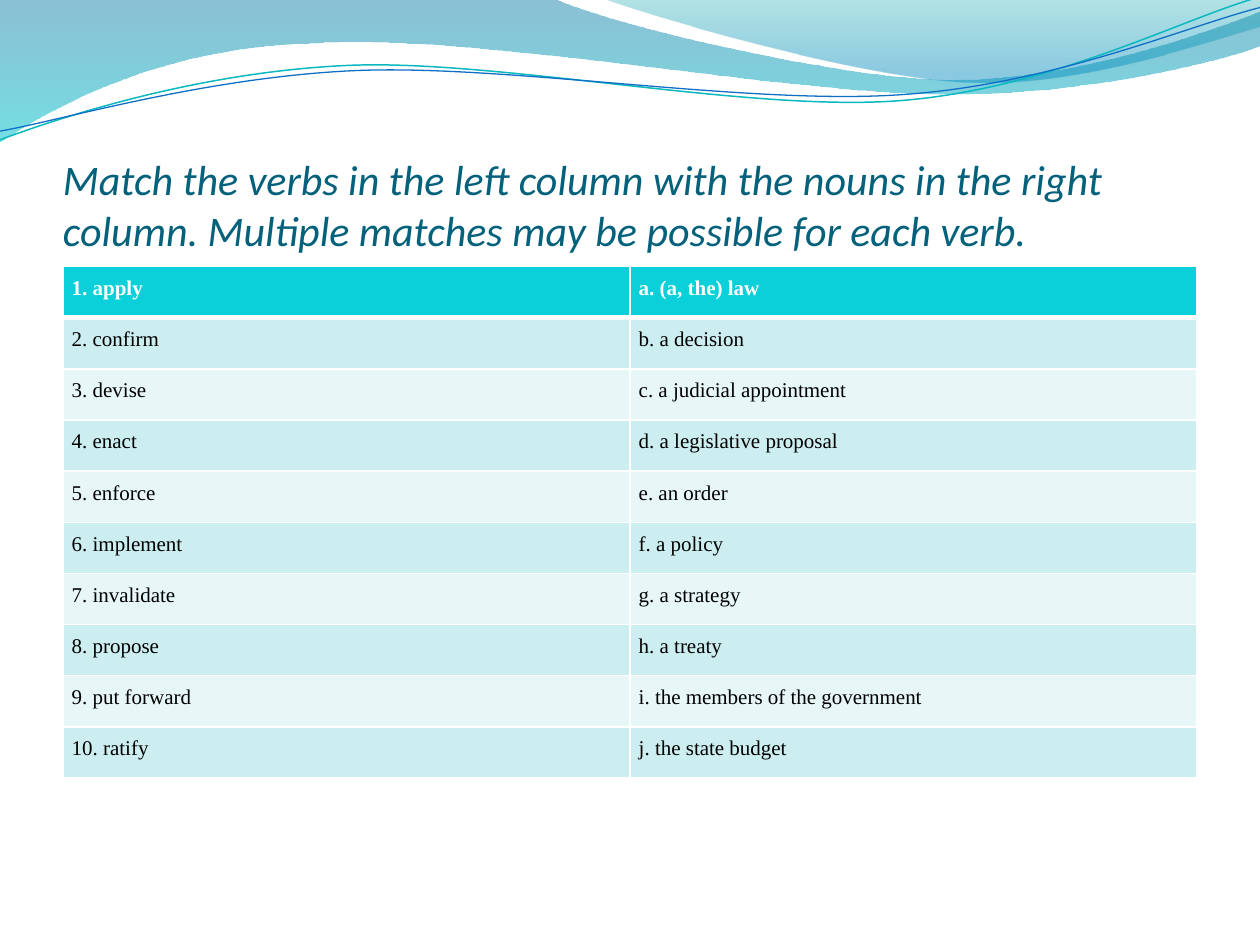
from lxml.etree import SubElement
from pptx import Presentation
from pptx.dml.color import RGBColor
from pptx.enum.text import MSO_ANCHOR
from pptx.oxml import parse_xml
from pptx.oxml.ns import nsdecls, qn
from pptx.util import Pt

WHITE = RGBColor(0xFF, 0xFF, 0xFF)
BLACK = RGBColor(0, 0, 0)
NAVY = RGBColor(0x04, 0x61, 0x7B)
DEEP = RGBColor(0x00, 0x74, 0xA1)
AQUA = RGBColor(0x00, 0xC6, 0xCF)
SEA = RGBColor(0x00, 0xA1, 0xA9)
SKY = RGBColor(0x00, 0x8B, 0xBF)
TEAL = RGBColor(0x0A, 0xB8, 0xBF)
BLUE = RGBColor(0x0F, 0x6F, 0xC6)
HEAD = RGBColor(0x0B, 0xD0, 0xD9)
BANDS = RGBColor(0xCC, 0xEE, 0xF1), RGBColor(0xE7, 0xF7, 0xF8)

TITLE = ("Match the verbs in the left column with the nouns in the right column. "
         "Multiple matches may be possible for each verb.")
PAIRS = [
    ("1. apply", "a. (a, the) law"),
    ("2. confirm", "b. a decision"),
    ("3. devise", "c. a judicial appointment"),
    ("4. enact", "d. a legislative proposal"),
    ("5. enforce", "e. an order"),
    ("6. implement", "f. a policy"),
    ("7. invalidate", "g. a strategy"),
    ("8. propose", "h. a treaty"),
    ("9. put forward", "i. the members of the government"),
    ("10. ratify", "j. the state budget"),
]

BACK = [(0, 0), (316.8, -0.7),
        (342.7, 12.2, 478.1, 45.4, 545.8, 45.4),
        (614.2, 45.4, 689.8, 18.7, 720, 6.5), (720.7, 25.9),
        (707.8, 31.7, 626.4, 54.7, 537.1, 54),
        (447.8, 53.3, 275, 20.2, 185, 24.5),
        (92.9, 25.9, 33.1, 59.8, -0.7, 81.4), (0, 0)]
FRONT = [(344.9, -0.7),
         (366.5, 7.9, 491, 44.6, 553.7, 46.8),
         (616.3, 49.7, 691.9, 23, 720, 15.1), (720, 0), (344.9, -0.7)]
UPPER = [(0, 79.9),
         (34.6, 67, 113.8, 41, 199.4, 37.4),
         (284.4, 33.8, 427, 64.1, 513.4, 57.6),
         (599.8, 51.1, 675.4, 10.8, 718.6, -1.4)]
LOWER = [(0, 74.9),
         (33.8, 69.1, 118.1, 43.9, 203.8, 40.3),
         (290.2, 36.7, 429.8, 60.5, 516.2, 54),
         (601.9, 48.2, 677.5, 15.1, 720, 4.3)]


def add_path(slide, box, steps, close):
    """Draw a freeform of lines and cubic curves, offset by the box corner."""
    left, top = box[:2]
    points = [(Pt(left + step[i]), Pt(top + step[i + 1]))
              for step in steps for i in range(0, len(step), 2)]
    pen = slide.shapes.build_freeform(*points[0])
    pen.add_line_segments(points[1:], close=close)
    shape = pen.convert_to_shape()
    shape.shadow.inherit = False
    lines = iter(list(shape.element.spPr.iter(qn("a:lnTo"))))
    for step in steps[1:]:
        line = next(lines)
        if len(step) == 6:
            line.addprevious(curve := parse_xml(f'<a:cubicBezTo {nsdecls("a")}/>'))
            for part in (line, next(lines), next(lines)):
                curve.append(part[0])
                part.getparent().remove(part)
    return shape


def add_wave(slide, box, steps, stops):
    """Draw a filled wave with a see-through vertical gradient."""
    wave = add_path(slide, box, steps, True)
    wave.line.fill.background()
    wave.fill.gradient()
    wave.fill.gradient_angle = 270
    for stop, (place, color, alpha) in zip(wave.fill.gradient_stops, stops):
        stop.position = place
        stop.color.rgb = color
    tints = wave.element.spPr.iter(qn("a:srgbClr"))
    for tint, (place, color, alpha) in zip(tints, stops):
        SubElement(tint, qn("a:alpha"), val=str(alpha * 1000))


def add_curve(slide, box, steps, color, width):
    """Draw an open curved line."""
    curve = add_path(slide, box, steps, False)
    curve.fill.background()
    curve.line.color.rgb = color
    curve.line.width = Pt(width)


def add_banner(slide, box):
    """Draw the waves and lines along the top."""
    add_wave(slide, box, BACK, [(0, DEEP, 45), (1, AQUA, 55)])
    add_wave(slide, box, FRONT, [(0, SEA, 30), (0.8, SKY, 45)])
    add_curve(slide, box, UPPER, TEAL, 0.85)
    add_curve(slide, box, LOWER, BLUE, 0.75)


def put_text(frame, text, font, size, color, bold=False, italic=False, space=1.0):
    """Write one formatted paragraph into a text frame."""
    frame.word_wrap = True
    para = frame.paragraphs[0]
    para.line_spacing = space
    run = para.add_run()
    run.text = text
    run.font.name = font
    run.font.size = Pt(size)
    run.font.color.rgb = color
    run.font.bold = bold
    run.font.italic = italic


def add_title(slide, box):
    """Place the task title at the foot of its box."""
    frame = slide.shapes.add_textbox(*map(Pt, box)).text_frame
    frame.margin_left = frame.margin_right = frame.margin_bottom = 0
    frame.margin_top = Pt(3.6)
    frame.vertical_anchor = MSO_ANCHOR.BOTTOM
    put_text(frame, TITLE, "Calibri", 24, NAVY, italic=True)


def set_edges(cell, widths):
    """Give a cell white edges: left, right, top, bottom."""
    props = cell._tc.get_or_add_tcPr()
    for i, (side, width) in enumerate(zip("LRTB", widths)):
        props.insert(i, parse_xml(
            f'<a:ln{side} {nsdecls("a")} w="{Pt(width)}"><a:solidFill>'
            f'<a:srgbClr val="{WHITE}"/></a:solidFill></a:ln{side}>'))


def add_pairs(slide, box):
    """Place the table of verbs and nouns."""
    rows, cols = len(PAIRS), len(PAIRS[0])
    table = slide.shapes.add_table(rows, cols, *map(Pt, box)).table
    table.horz_banding = False
    table.first_row = True
    for col in table.columns:
        col.width = Pt(box[2] / cols)
    for r, pair in enumerate(PAIRS):
        table.rows[r].height = Pt(box[3] / rows)
        first = r == 0
        for c, text in enumerate(pair):
            cell = table.cell(r, c)
            cell.margin_left = cell.margin_right = Pt(5)
            cell.margin_top = cell.margin_bottom = Pt(5)
            cell.fill.solid()
            cell.fill.fore_color.rgb = HEAD if first else BANDS[(r - 1) % 2]
            set_edges(cell, (1, 1, 3 if r == 1 else 1, 3 if first else 1))
            put_text(cell.text_frame, text, "Times New Roman", 12,
                     WHITE if first else BLACK, bold=first, space=1.07)


def main():
    """Build the slide and save it."""
    deck = Presentation()
    deck.slide_width, deck.slide_height = Pt(720), Pt(540)
    slide = deck.slides.add_slide(deck.slide_layouts[6])
    add_banner(slide, (0, 0, 720, 82))
    add_title(slide, (36, 55.4, 648, 90))
    add_pairs(slide, (36, 152.3, 648, 292.3))
    deck.save("out.pptx")


if __name__ == "__main__":
    main()
